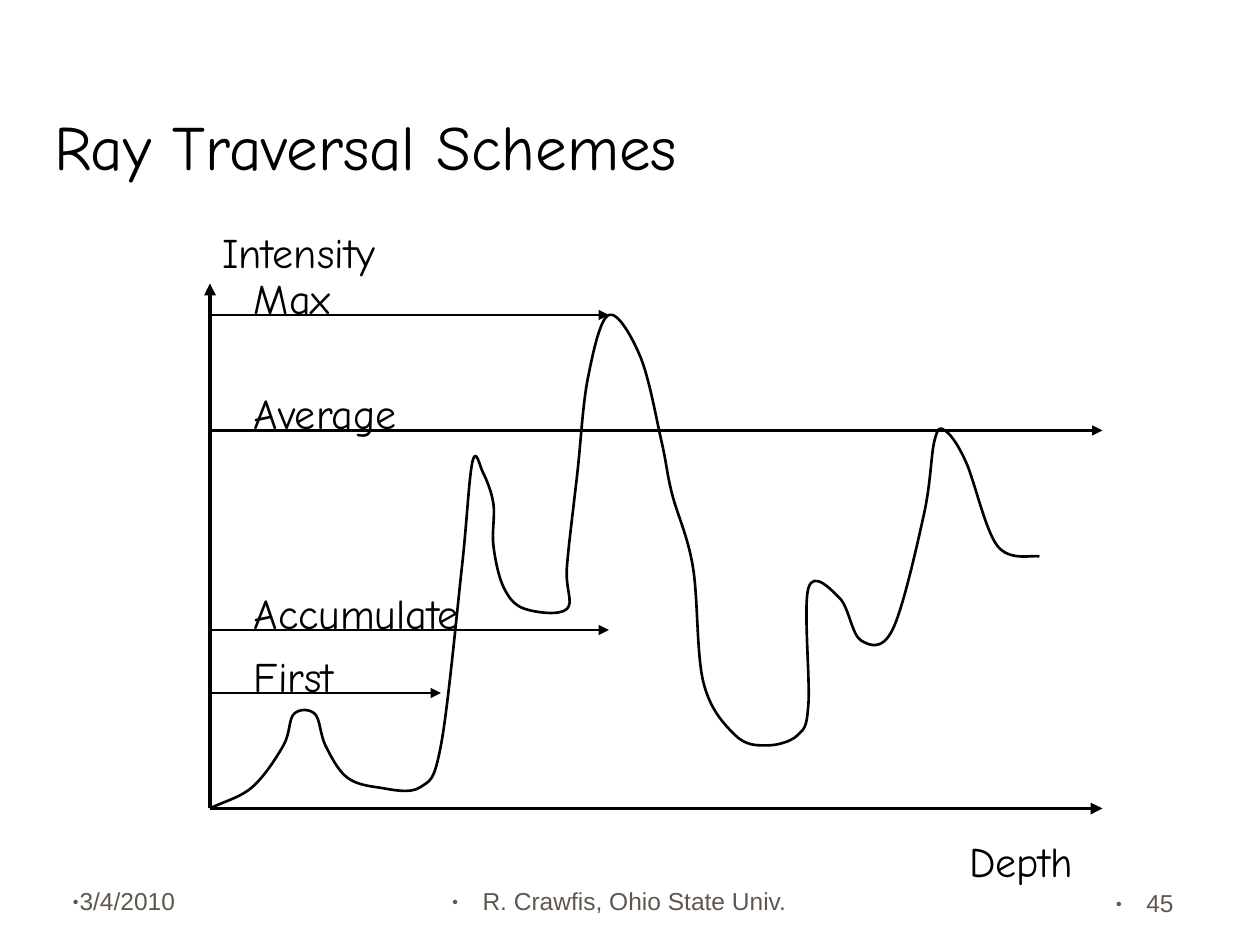
from lxml import etree
from pptx import Presentation
from pptx import util as u
from pptx.dml.color import RGBColor
from pptx.enum import shapes, text
from pptx.oxml.ns import qn

BLACK = RGBColor(0x00, 0x00, 0x00)
WHITE = RGBColor(0xFF, 0xFF, 0xFF)
TAUPE = RGBColor(0x5E, 0x57, 0x4E)
HAND, SANS = "Comic Neue", "Arial"
GRID = u.Cm(2.54) // 12

INTENSITY = [
    (0, 0), (4, 2), (7, 6), (8, 9), (10, 9), (11, 6), (13, 3), (16, 2), (20, 2),
    (22, 6), (24, 23), (25, 33), (26, 32), (27, 29), (27, 25), (28, 21), (30, 19),
    (34, 19), (34, 23), (35, 32), (36, 41), (38, 47), (41, 43), (43, 35), (44, 30),
    (46, 23), (47, 12), (50, 7), (53, 6), (56, 7), (57, 10), (57, 21), (60, 20),
    (62, 16), (65, 17), (68, 28), (69, 35), (70, 36), (72, 33), (75, 25), (79, 24),
]
SCHEMES = [
    ("Max", 47, 38, 2.18),
    ("Average", 36, 85, 3.76),
    ("Accumulate", 17, 38, 5.05),
    ("First", 11, 22, 2.49),
]


def add_text(slide, words, box, size=24, font=HAND, color=BLACK, wrap=False,
             align=text.PP_ALIGN.LEFT, anchor=text.MSO_ANCHOR.TOP, bullet=False):
    """Place one line of formatted text in box (left, top, width, height)."""
    frame = slide.shapes.add_textbox(*box).text_frame
    frame.word_wrap = wrap
    frame.vertical_anchor = anchor
    if not wrap:
        frame.auto_size = text.MSO_AUTO_SIZE.SHAPE_TO_FIT_TEXT
    line = frame.paragraphs[0]
    line.text = words
    line.alignment = align
    if bullet:
        props = line._p.get_or_add_pPr()
        props.set("marL", "0")
        props.set("indent", str(-u.Cm(0.63)))
        etree.SubElement(props, qn("a:buFont"), typeface=HAND)
        etree.SubElement(props, qn("a:buChar"), char="•")
    face = line.runs[0].font
    face.size, face.name = u.Pt(size), font
    face.color.rgb = color


def add_arrow(slide, start, end, weight):
    """Draw a straight black arrow from start to end."""
    arrow = slide.shapes.add_connector(shapes.MSO_CONNECTOR.STRAIGHT, *start, *end)
    arrow.line.color.rgb = BLACK
    arrow.line.width = u.Pt(weight)
    etree.SubElement(arrow.line._get_or_add_ln(), qn("a:tailEnd"), type="triangle")
    etree.SubElement(arrow._element.spPr, qn("a:effectLst"))


def smooth(curve):
    """Turn the straight segments of a freeform into Catmull-Rom Bezier curves."""
    path = next(curve._element.iter(qn("a:path")))
    knots = [(int(pt.get("x")), int(pt.get("y"))) for pt in path.iter(qn("a:pt"))]
    (x0, y0), (x1, y1) = knots[:2]
    padded = [(2 * x0 - x1, 2 * y0 - y1), *knots, knots[-1]]
    segments = zip(path.findall(qn("a:lnTo")), padded, padded[1:], padded[2:], padded[3:])
    for straight, before, start, end, after in segments:
        leave = [s + (e - b) / 6 for b, s, e in zip(before, start, end)]
        arrive = [e - (a - s) / 6 for s, e, a in zip(start, end, after)]
        bezier = etree.Element(qn("a:cubicBezTo"))
        for x, y in (leave, arrive, end):
            etree.SubElement(bezier, qn("a:pt"), x=str(round(x)), y=str(round(y)))
        path.replace(straight, bezier)


def add_curve(slide, points):
    """Draw a smooth open outline through points."""
    builder = slide.shapes.build_freeform(*points[0])
    builder.add_line_segments(points[1:], close=False)
    curve = builder.convert_to_shape()
    curve.shadow.inherit = False
    curve.fill.background()
    curve.line.color.rgb = BLACK
    curve.line.width = u.Pt(1.5)
    smooth(curve)


def draw_plot(slide, box):
    """Draw the axes, the intensity curve and the traversal schemes in box."""
    left, top, width, height = box
    bottom = top + height

    def at(depth, level):
        """Convert grid units from the origin to slide lengths."""
        return left + depth * GRID, bottom - level * GRID

    add_arrow(slide, at(0, 0), (left, top), 2.25)
    add_arrow(slide, at(0, 0), (left + width, bottom), 2.25)
    add_text(slide, "Depth", (left + width - u.Cm(2.93), bottom + u.Cm(0.42), u.Cm(2.92), u.Cm(1.27)))
    add_text(slide, "Intensity", (left, top - u.Cm(1.27), u.Cm(4.22), u.Cm(1.27)))
    add_curve(slide, [at(*knot) for knot in INTENSITY])
    for scheme, level, reach, span in SCHEMES:
        add_arrow(slide, at(0, level), at(reach, level), 1.5)
        x, y = at(3, level)
        add_text(slide, scheme, (x, y - u.Cm(0.99), u.Cm(span), u.Cm(1.27)))


def draw_title(slide, box):
    """Place the slide title at the bottom of box."""
    add_text(slide, "Ray Traversal Schemes", box, size=36, wrap=True,
             anchor=text.MSO_ANCHOR.BOTTOM)


def draw_footer(slide, box):
    """Place the date, author and slide number across box."""
    left, top, width, height = box
    side, middle = u.Cm(5.28), u.Cm(8.05)
    parts = [
        ("3/4/2010", left, top, side, text.PP_ALIGN.LEFT),
        ("R. Crawfis, Ohio State Univ.", left + u.Cm(7.49), top, middle, text.PP_ALIGN.CENTER),
        ("45", left + width - side, top + u.Cm(0.05), side, text.PP_ALIGN.RIGHT),
    ]
    for words, x, y, span, align in parts:
        add_text(slide, words, (x, y, span, height), size=14, font=SANS, color=TAUPE,
                 wrap=True, align=align, anchor=text.MSO_ANCHOR.BOTTOM, bullet=True)


def main():
    """Build the slide and save it."""
    deck = Presentation()
    deck.slide_width, deck.slide_height = u.Cm(25.4), u.Cm(19.05)
    slide = deck.slides.add_slide(deck.slide_layouts[6])
    slide.background.fill.solid()
    slide.background.fill.fore_color.rgb = WHITE
    draw_footer(slide, (u.Cm(1.2), u.Cm(17.3), u.Cm(22.71), u.Cm(1.27)))
    draw_title(slide, (u.Cm(0.84), u.Cm(0.64), u.Cm(23.7), u.Cm(3.18)))
    draw_plot(slide, (20 * GRID, 27 * GRID, 85 * GRID, 50 * GRID))
    deck.save("out.pptx")


if __name__ == "__main__":
    main()
